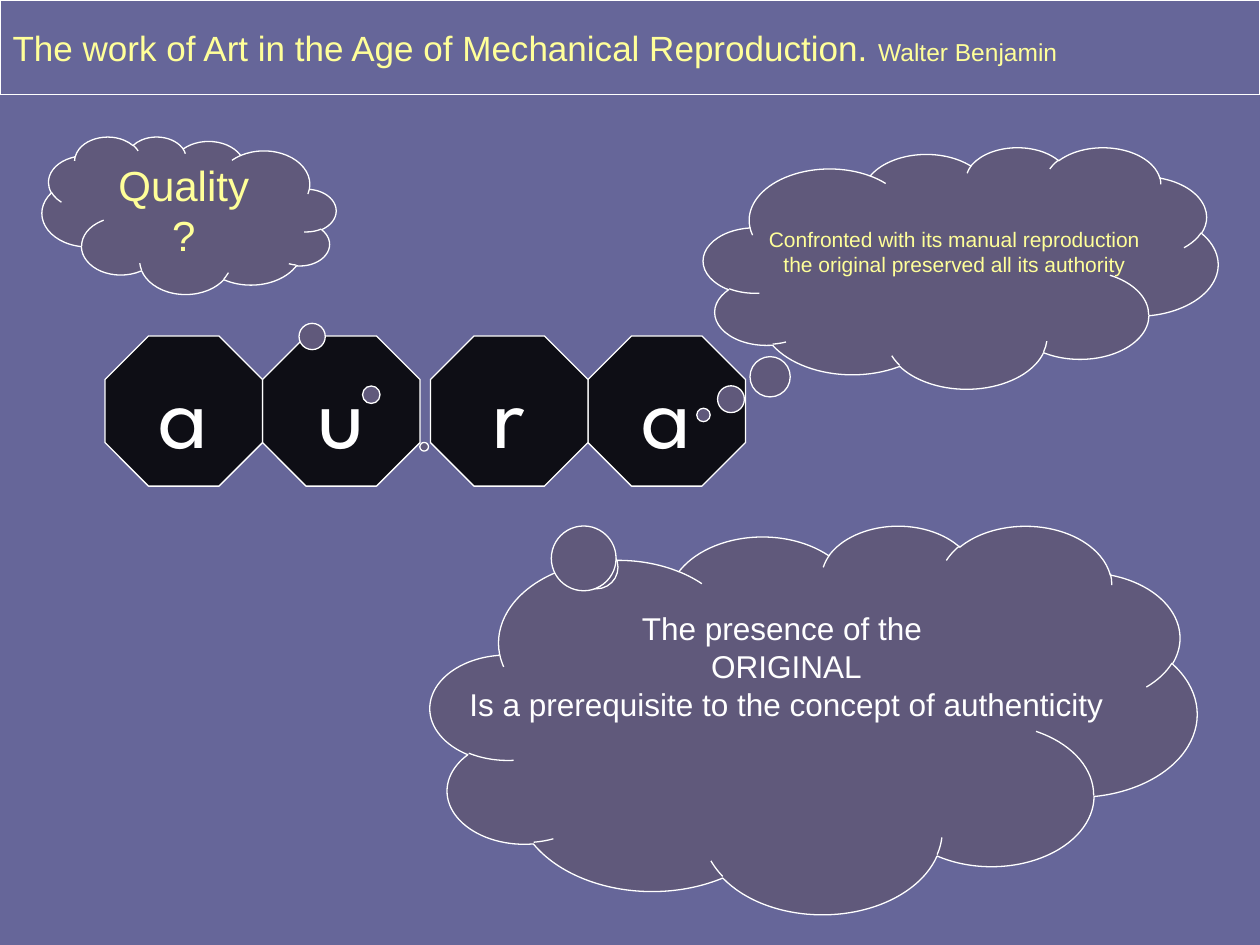
from lxml import etree
from pptx import Presentation
from pptx import util as u
from pptx.dml.color import RGBColor
from pptx.enum import shapes, text
from pptx.oxml.ns import qn

COLORS = {
    "background": "666699",
    "cloud": "60597B",
    "tile": "000000",
    "white": "FFFFFF",
    "yellow": "FFFF99",
}
BODY_FONT, LETTER_FONT = "Arial", "League Spartan"
COLUMNS, ROWS = 120, 90
CELL = u.Inches(10) / COLUMNS


def color(name):
    return RGBColor.from_string(COLORS[name])


def cells(*counts):
    """Turn grid counts into lengths."""
    return [u.Emu(round(count * CELL)) for count in counts]


def outline(shape):
    shape.line.color.rgb = color("white")
    shape.line.width = u.Pt(0.75)


def add_span(para, words, size, shade, font=BODY_FONT):
    span = para.add_run()
    span.text = words
    span.font.size = u.Pt(size)
    span.font.name = font
    span.font.color.rgb = color(shade)


def write_centered(shape, paragraphs, size, shade, font=BODY_FONT):
    """Write centred paragraphs, each a list of lines."""
    frame = shape.text_frame
    frame.word_wrap = False
    frame.vertical_anchor = text.MSO_ANCHOR.MIDDLE
    for index, lines in enumerate(paragraphs):
        para = frame.add_paragraph() if index else frame.paragraphs[0]
        para.alignment = text.PP_ALIGN.CENTER
        for number, words in enumerate(lines):
            if number:
                para.add_line_break()
            add_span(para, words, size, shade, font)


def add_outlined_shape(page, kind, place, fill, adjustments):
    shape = page.shapes.add_shape(kind, *cells(*place))
    shape.shadow.inherit = False
    shape.fill.solid()
    shape.fill.fore_color.rgb = color(fill)
    outline(shape)
    for index, value in enumerate(adjustments):
        shape.adjustments[index] = value
    return shape


def add_tile(page, column, letter):
    tile = add_outlined_shape(page, shapes.MSO_SHAPE.OCTAGON,
                              (column, 32, 15, 14.3), "tile", [0.29])
    shade = tile.fill._xPr.find(qn("a:solidFill"))[0]
    etree.SubElement(shade, qn("a:alpha")).set("val", "86000")
    write_centered(tile, [[letter]], 54, "white", LETTER_FONT)


def add_cloud(page, place, tail, mirrored=False):
    cloud = add_outlined_shape(page, shapes.MSO_SHAPE.CLOUD_CALLOUT,
                               place, "cloud", tail)
    if mirrored:
        cloud._element.spPr.find(qn("a:xfrm")).set("flipH", "1")
    return cloud


def add_label(page, place, paragraphs, size):
    box = page.shapes.add_textbox(*cells(*place))
    write_centered(box, paragraphs, size, "yellow")
    box.text_frame.auto_size = text.MSO_AUTO_SIZE.SHAPE_TO_FIT_TEXT


def format_title(page):
    title = page.shapes.title
    title.left, title.top, title.width, title.height = cells(0, 0, COLUMNS, 9)
    outline(title)
    frame = title.text_frame
    frame.auto_size = text.MSO_AUTO_SIZE.NONE
    frame.vertical_anchor = text.MSO_ANCHOR.MIDDLE
    para = frame.paragraphs[0]
    para.alignment = text.PP_ALIGN.LEFT
    add_span(para, "The work of Art in the Age of Mechanical Reproduction. ",
             20, "yellow")
    add_span(para, "Walter Benjamin", 14, "yellow")


def main():
    deck = Presentation()
    deck.slide_width, deck.slide_height = cells(COLUMNS, ROWS)
    page = deck.slides.add_slide(deck.slide_layouts.get_by_name("Title Only"))
    page.background.fill.solid()
    page.background.fill.fore_color.rgb = color("background")
    format_title(page)

    # Letter tiles, in two touching pairs, stacked from the right
    for column, letter in ((56, "a"), (41, "r"), (25, "u"), (10, "a")):
        add_tile(page, column, letter)

    # Thought clouds
    add_cloud(page, (67, 14, 49, 23), (-0.5, 0.61))
    add_cloud(page, (4, 13, 28, 15), (-0.8, 1.47), mirrored=True)
    presence = add_cloud(page, (41, 50, 73, 37), (-0.29, -0.4))
    write_centered(presence, [
        ["The presence of the ", "ORIGINAL"],
        ["Is a prerequisite to the concept of authenticity"],
    ], 18, "white")
    presence.text_frame.margin_bottom = u.Inches(0.75)

    # Labels over the upper clouds
    add_label(page, (72, 21, 37.8, 6), [
        ["Confronted with its manual reproduction"],
        ["the original preserved all its authority"],
    ], 12)
    add_label(page, (9, 17, 17, 6), [["Quality?"]], 24)

    deck.save("out.pptx")


if __name__ == "__main__":
    main()
